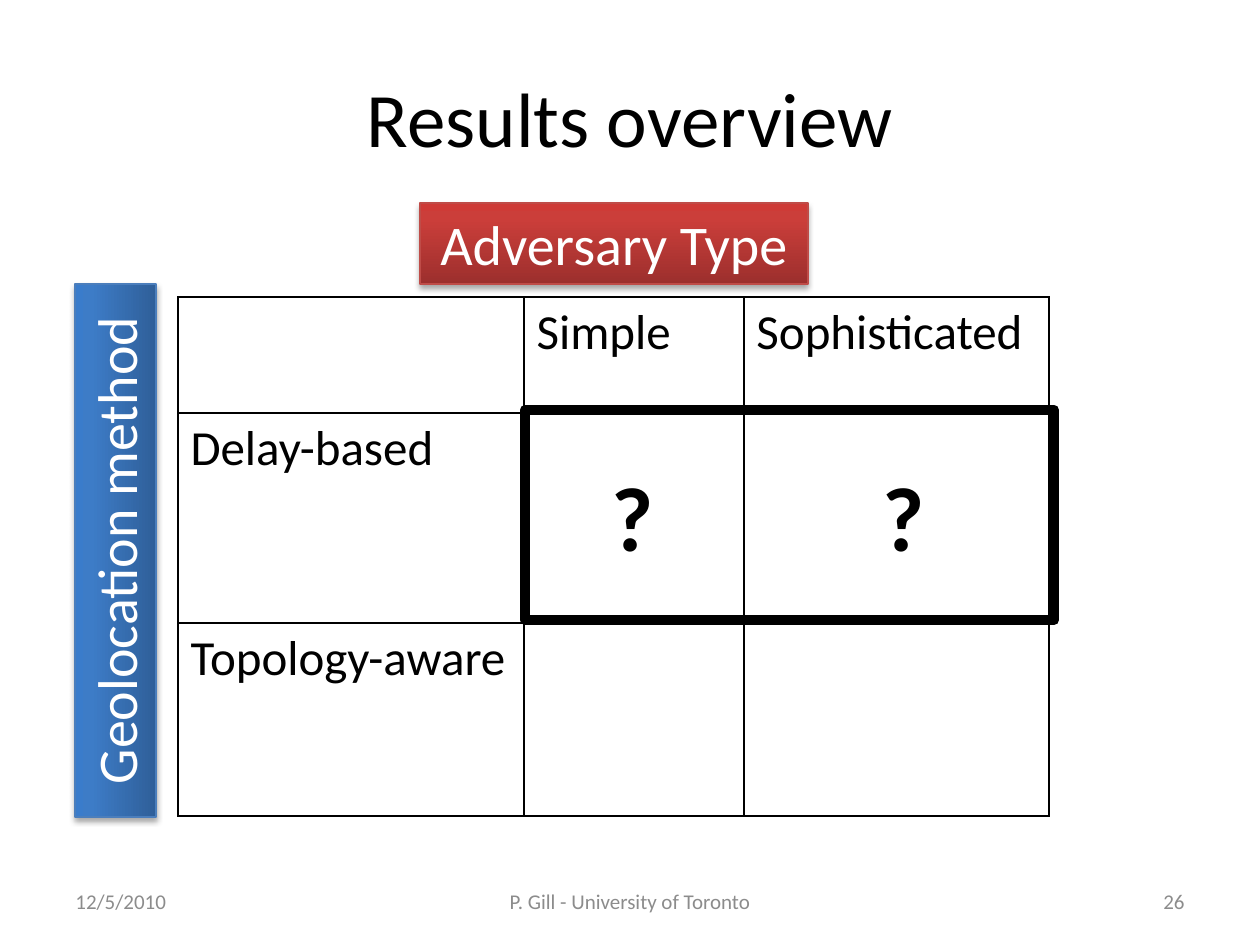
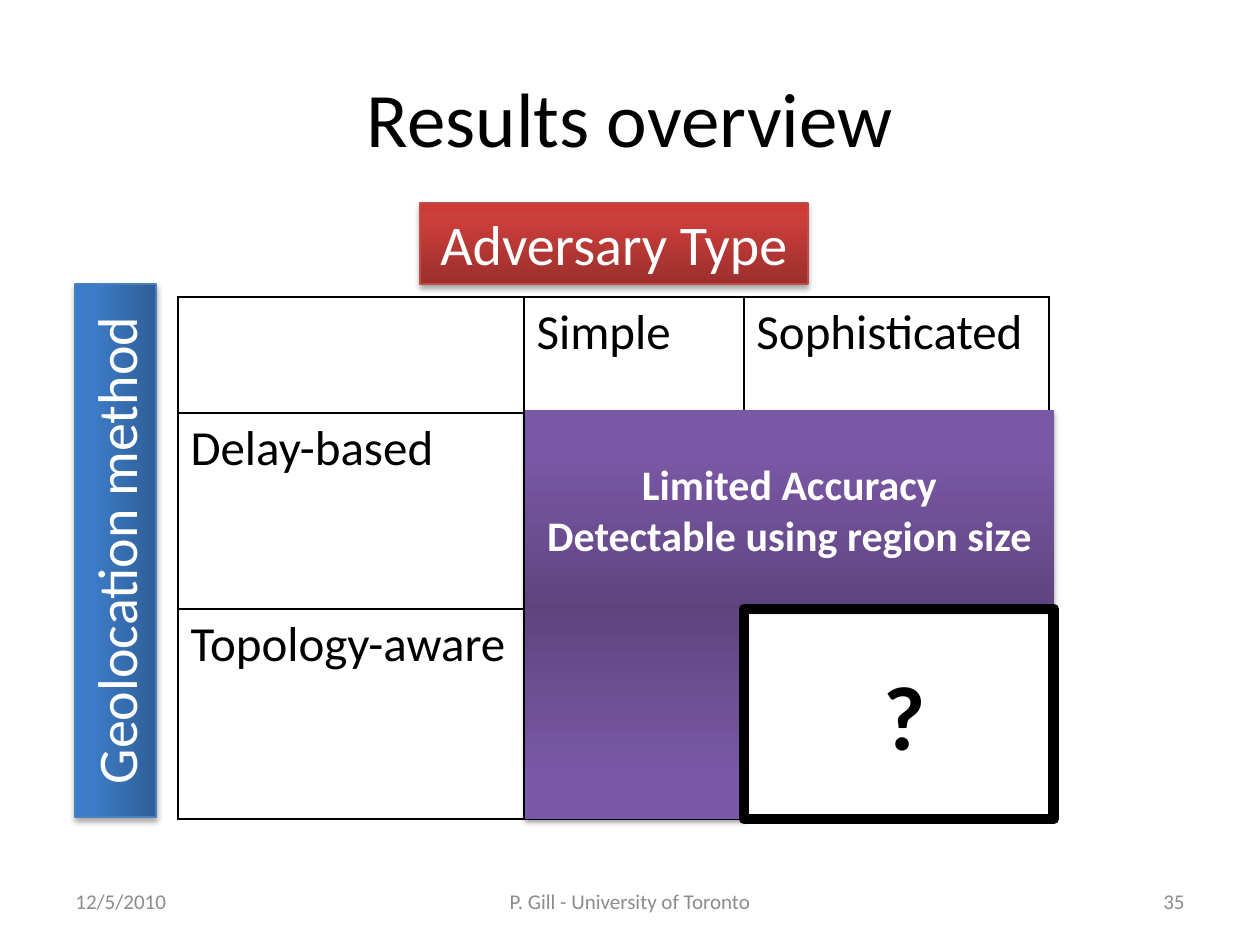
from lxml import etree
from pptx import Presentation
from pptx import util as u
from pptx.dml.color import RGBColor
from pptx.enum import shapes, text
from pptx.oxml.ns import nsdecls, qn
from pptx.oxml import parse_xml

SCALE = 914400 / 126
FONT = "Calibri"
COLORS = {"ink": "000000", "paper": "FFFFFF", "footer": "8C8C8C",
          "red_line": "BF4C48", "blue_line": "4B7EBC"}
GRADIENTS = {  # bottom, four fifths up, top
    "red": ("9C2F2D", "CB3E3A", "CE3B37"),
    "blue": ("2F5F99", "3D7CC7", "3A7CCB"),
    "purple": ("5F4480", "7B58A6", "7C57A8"),
}
STOPS = (0, 80, 100)

TITLE = "Results overview"
DATE, AUTHOR = "12/5/2010", "P. Gill - University of Toronto"
ADVERSARY, METHOD = "Adversary Type", "Geolocation method"
GRID = [["", "Simple", "Sophisticated"],
        ["Delay-based", "", ""],
        ["Topology-aware", "", ""]]
TABLE_LEFT, TABLE_TOP = 178, 297
COLUMNS = (346, 220, 305)

# Boxes are (left, top, width, height) in px
SLIDES = [
    {"number": "26", "rows": (116, 210, 193),
     "findings": [],
     "frame": (525, 410, 529, 210),
     "questions": [(528, 454, 210, 123), (799, 454, 210, 123)]},
    {"number": "35", "rows": (116, 196, 210),
     "findings": [
         ((525, 410, 529, 198), 0,
          ["Limited Accuracy", "Detectable using region size"]),
         ((525, 608, 220, 211), 180, [])],
     "frame": (744, 609, 310, 210),
     "questions": [(756, 653, 297, 123)]},
]


def px(length):
    return u.Emu(round(length * SCALE))


def write(frame, lines, size, color="ink", bold=False, align="LEFT", anchor="TOP"):
    frame.word_wrap = True
    frame.vertical_anchor = text.MSO_ANCHOR[anchor]
    for index, line in enumerate(lines):
        paragraph = frame.add_paragraph() if index else frame.paragraphs[0]
        paragraph.alignment = text.PP_ALIGN[align]
        run = paragraph.add_run()
        run.text = line
        run.font.name, run.font.size, run.font.bold = FONT, u.Pt(size), bold
        run.font.color.rgb = RGBColor.from_string(COLORS[color])


def add_text(slide, box, line, size, **style):
    write(slide.shapes.add_textbox(*map(px, box)).text_frame, [line], size, **style)


def add_rect(slide, box, line=None, width=0.75):
    rect = slide.shapes.add_shape(shapes.MSO_SHAPE.RECTANGLE, *map(px, box))
    rect.shadow.inherit = False
    rect.fill.background()
    if line:
        rect.line.color.rgb = RGBColor.from_string(COLORS[line])
        rect.line.width = u.Pt(width)
    else:
        rect.line.fill.background()
    return rect


def add_glossy(slide, box, gradient, rotation=0, line=None):
    """Rectangle with an upward gradient and a soft shadow below it."""
    rect = add_rect(slide, box, line)
    rect.rotation = rotation
    stops = "".join(
        f'<a:gs pos="{stop * 1000}"><a:srgbClr val="{color}"/></a:gs>'
        for stop, color in zip(STOPS, GRADIENTS[gradient]))
    properties = rect.fill._xPr
    properties.replace(properties.find(qn("a:noFill")), parse_xml(
        f'<a:gradFill {nsdecls("a")} rotWithShape="1"><a:gsLst>{stops}</a:gsLst>'
        '<a:lin ang="16200000" scaled="0"/></a:gradFill>'))
    properties.find(qn("a:effectLst")).append(parse_xml(
        f'<a:outerShdw {nsdecls("a")} blurRad="{u.Pt(3.1)}" dist="{u.Pt(1.8)}" '
        'dir="5400000" rotWithShape="0"><a:srgbClr val="000000">'
        '<a:alpha val="35000"/></a:srgbClr></a:outerShdw>'))
    return rect


def outline(cell):
    properties = cell._tc.get_or_add_tcPr()
    for index, side in enumerate("LRTB"):
        border = etree.Element(qn(f"a:ln{side}"), w=str(u.Pt(1)))
        fill = etree.SubElement(border, qn("a:solidFill"))
        etree.SubElement(fill, qn("a:srgbClr"), val=COLORS["ink"])
        properties.insert(index, border)


def add_grid(slide, heights):
    table = slide.shapes.add_table(
        len(heights), len(COLUMNS), px(TABLE_LEFT), px(TABLE_TOP),
        px(sum(COLUMNS)), px(sum(heights))).table
    table.first_row = table.horz_banding = False
    for column, width in zip(table.columns, COLUMNS):
        column.width = px(width)
    for row, height, labels in zip(table.rows, heights, GRID):
        row.height = px(height)
        for cell, label in zip(row.cells, labels):
            cell.fill.background()
            outline(cell)
            if label:
                write(cell.text_frame, [label], 28)


def add_shared(slide, number):
    """Title, footers and the two axis labels."""
    add_text(slide, (63, 38, 1134, 157), TITLE, 44, align="CENTER", anchor="MIDDLE")
    for left, width, line, align in ((63, 294, DATE, "LEFT"),
                                     (430, 400, AUTHOR, "CENTER"),
                                     (903, 294, number, "RIGHT")):
        add_text(slide, (left, 876, width, 50), line, 12, color="footer",
                 align=align, anchor="MIDDLE")
    for box, gradient, rotation, label in (
            ((420, 203, 388, 81), "red", 0, ADVERSARY),
            ((-151, 510, 533, 81), "blue", 270, METHOD)):
        axis = add_glossy(slide, box, gradient, rotation, f"{gradient}_line")
        write(axis.text_frame, [label], 32, color="paper", align="CENTER")


def main():
    deck = Presentation()
    deck.slide_width, deck.slide_height = px(1260), px(945)
    for content in SLIDES:
        slide = deck.slides.add_slide(deck.slide_layouts[6])
        add_grid(slide, content["rows"])
        add_shared(slide, content["number"])
        for box, rotation, lines in content["findings"]:
            finding = add_glossy(slide, box, "purple", rotation)
            write(finding.text_frame, lines, 24, color="paper", bold=True,
                  align="CENTER", anchor="MIDDLE")
        add_rect(slide, content["frame"], "ink", 6)
        for box in content["questions"]:
            add_text(slide, box, "?", 52, bold=True, align="CENTER")
    deck.save("out.pptx")


if __name__ == "__main__":
    main()
